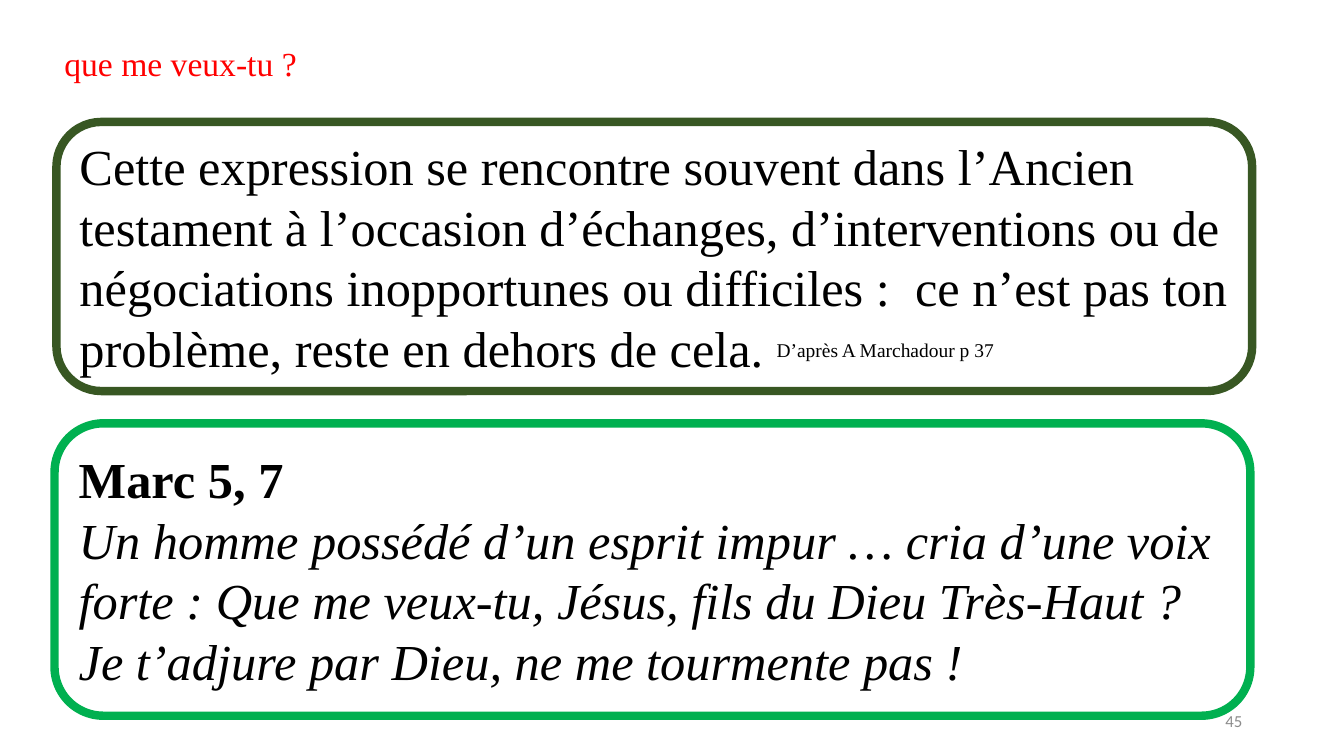
from dataclasses import dataclass

from pptx import Presentation
from pptx import util as u
from pptx.dml import color
from pptx.enum import shapes, text

COLOURS = {
    "number": "8C8C8C",
    "title": "FF0000",
    "body": "000000",
    "quote frame": "385723",
    "gospel frame": "00B050",
}
SERIF = "Times New Roman"
WIDTH, HEIGHT = u.Inches(13.33), u.Inches(7.5)
COLUMN, ROW = WIDTH / 100, HEIGHT / 100
FRAME_LEFT, FRAME_WIDTH = 4.13, 88.97

FORMATS = {
    "number": {"name": "Calibri", "size": u.Pt(12)},
    "title": {"name": SERIF, "size": u.Pt(24)},
    "body": {"name": SERIF, "size": u.Pt(36)},
    "heading": {"name": SERIF, "size": u.Pt(36), "bold": True},
    "scripture": {"name": SERIF, "size": u.Pt(36), "italic": True},
    "credit": {"name": SERIF, "size": u.Pt(24)},
}


@dataclass
class Piece:
    wording: str
    style: str
    raised: bool = False


@dataclass
class Block:
    left: float
    top: float
    width: float
    height: float
    paragraphs: list[list[Piece]]
    frame: str = ""
    anchor: text.MSO_ANCHOR = text.MSO_ANCHOR.MIDDLE
    align: text.PP_ALIGN = text.PP_ALIGN.LEFT


BLOCKS = [
    Block(70.67, 92.67, 22.5, 5.33, [[Piece("45", "number")]],
          align=text.PP_ALIGN.RIGHT),
    Block(4.05, 5.07, 30.6, 6.67, [[Piece("que me veux-tu ?", "title")]],
          anchor=text.MSO_ANCHOR.TOP),
    Block(FRAME_LEFT + 0.07, 16.13, FRAME_WIDTH, 35.6, [[
        Piece("Cette expression se rencontre souvent dans l’Ancien testament "
              "à l’occasion d’échanges, d’interventions ou de négociations "
              "inopportunes ou difficiles :  ce n’est pas ton problème, "
              "reste en dehors de cela. ", "body"),
        Piece("D’après A Marchadour p 37", "credit", raised=True),
    ]], frame="quote frame"),
    Block(FRAME_LEFT - 0.07, 56, FRAME_WIDTH, 38.67, [
        [Piece("Marc 5, 7", "heading")],
        [Piece("Un homme possédé d’un esprit impur … cria d’une voix forte : "
               "Que me veux-tu, Jésus, fils du Dieu Très-Haut ? "
               "Je t’adjure par Dieu, ne me tourmente pas !", "scripture")],
    ], frame="gospel frame"),
]


def add_piece(paragraph, piece: Piece) -> None:
    run = paragraph.add_run()
    run.text = piece.wording
    for attribute, value in FORMATS[piece.style].items():
        setattr(run.font, attribute, value)
    colour = COLOURS.get(piece.style, COLOURS["body"])
    run.font.color.rgb = color.RGBColor.from_string(colour)
    if piece.raised:
        run._r.get_or_add_rPr().set("baseline", "30000")


def add_block(slide, block: Block) -> None:
    position = [round(length) for length in (
        block.left * COLUMN, block.top * ROW,
        block.width * COLUMN, block.height * ROW)]
    if block.frame:
        shape = slide.shapes.add_shape(
            shapes.MSO_SHAPE.ROUNDED_RECTANGLE, *position)
        shape.shadow.inherit = False
        shape.fill.background()
        shape.line.color.rgb = color.RGBColor.from_string(COLOURS[block.frame])
        shape.line.width = u.Pt(6)
    else:
        shape = slide.shapes.add_textbox(*position)
    frame = shape.text_frame
    frame.word_wrap = True
    frame.vertical_anchor = block.anchor
    for index, pieces in enumerate(block.paragraphs):
        paragraph = frame.add_paragraph() if index else frame.paragraphs[0]
        paragraph.alignment = block.align
        for piece in pieces:
            add_piece(paragraph, piece)


def main() -> None:
    presentation = Presentation()
    presentation.slide_width, presentation.slide_height = WIDTH, HEIGHT
    slide = presentation.slides.add_slide(presentation.slide_layouts[6])
    for block in BLOCKS:
        add_block(slide, block)
    presentation.save("out.pptx")


if __name__ == "__main__":
    main()
